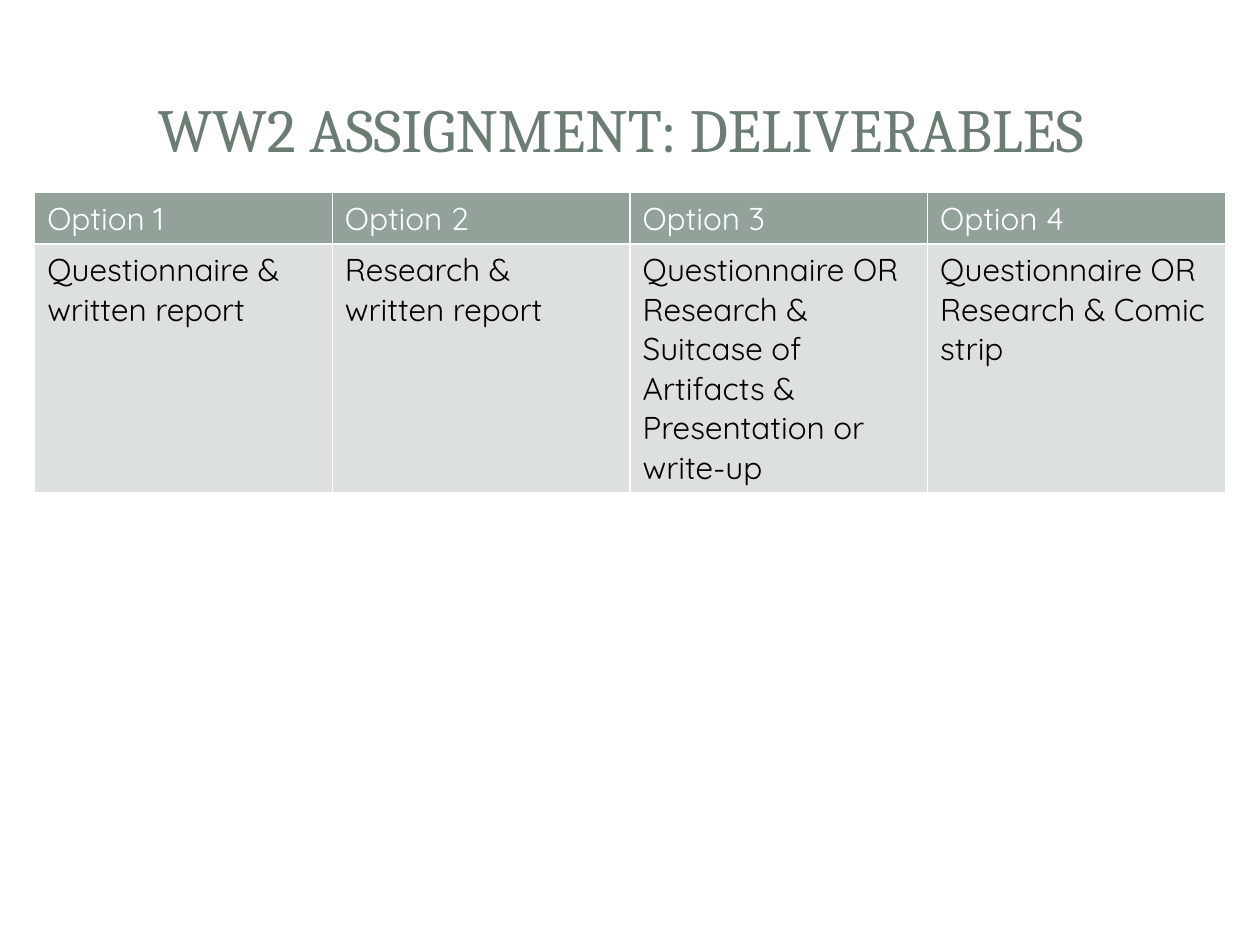
from lxml.etree import SubElement
from pptx import Presentation
from pptx.dml.color import RGBColor
from pptx.enum.shapes import MSO_SHAPE
from pptx.enum.text import MSO_ANCHOR, PP_ALIGN
from pptx.oxml.ns import qn
from pptx.util import Cm, Pt

WHITE = RGBColor(0xFF, 0xFF, 0xFF)
BLACK = RGBColor(0, 0, 0)
GREEN = RGBColor(0x6B, 0x7D, 0x72)
SAGE = RGBColor(0x93, 0xA2, 0x99)
PALE = RGBColor(0xDC, 0xE0, 0xDE)

TITLE = "WW2 ASSIGNMENT: DELIVERABLES "
OPTIONS = [
    ("Option 1", "Questionnaire & written report"),
    ("Option 2", "Research & written report"),
    ("Option 3", "Questionnaire OR Research & Suitcase of Artifacts"
                 " & Presentation or write-up"),
    ("Option 4", "Questionnaire OR Research & Comic strip"),
]
# Row height in cm, fill and text colour: header, then body
ROWS = [(1.04, SAGE, WHITE), (5.02, PALE, BLACK)]
WIDTH = 6
# Page, title band and band centre: shape, left, top, width, height, opacity
PANELS = [
    (MSO_SHAPE.ROUNDED_RECTANGLE, 0.25, 0.28, 24.89, 18.52, 100),
    (MSO_SHAPE.RECTANGLE, 0.76, 0.76, 23.88, 3.68, 83),
    (MSO_SHAPE.RECTANGLE, 1.04, 1.04, 23.29, 3.1, 100),
]


def write(frame, text, font="Quicksand", size=18, color=BLACK,
          align=PP_ALIGN.LEFT):
    para = frame.paragraphs[0]
    para.alignment = align
    run = para.add_run()
    run.text = text
    run.font.name = font
    run.font.size = Pt(size)
    run.font.color.rgb = color


def panel(slide, kind, left, top, width, height, alpha):
    shape = slide.shapes.add_shape(
        kind, Cm(left), Cm(top), Cm(width), Cm(height))
    shape.shadow.inherit = False
    shape.line.fill.background()
    shape.fill.solid()
    shape.fill.fore_color.rgb = WHITE
    if kind == MSO_SHAPE.ROUNDED_RECTANGLE:
        shape.adjustments[0] = 0.02
    if alpha < 100:
        tint = shape.fill._xPr.find(f".//{qn('a:srgbClr')}")
        SubElement(tint, qn("a:alpha"), val=str(alpha * 1000))


def edge(cell, color, points=1):
    """Draw the four borders of a cell; call before its fill is set."""
    props = cell._tc.get_or_add_tcPr()
    for side in ("lnL", "lnR", "lnT", "lnB"):
        line = SubElement(props, qn(f"a:{side}"), w=str(Pt(points)))
        fill = SubElement(line, qn("a:solidFill"))
        SubElement(fill, qn("a:srgbClr"), val=str(color))


def main():
    deck = Presentation()
    deck.slide_width, deck.slide_height = Cm(25.4), Cm(19.05)
    slide = deck.slides.add_slide(deck.slide_layouts[6])

    for spot in PANELS:
        panel(slide, *spot)

    title = slide.shapes.add_textbox(Cm(1.19), Cm(1.14), Cm(22.94), Cm(2.9))
    frame = title.text_frame
    frame.word_wrap = True
    frame.vertical_anchor = MSO_ANCHOR.MIDDLE
    write(frame, TITLE, font="Cambria", size=35, color=GREEN,
          align=PP_ALIGN.CENTER)

    table = slide.shapes.add_table(
        len(ROWS), len(OPTIONS), Cm(0.7), Cm(3.88),
        Cm(WIDTH * len(OPTIONS)), Cm(sum(row[0] for row in ROWS))).table
    for r, (height, fill, color) in enumerate(ROWS):
        table.rows[r].height = Cm(height)
        for c, option in enumerate(OPTIONS):
            cell = table.cell(r, c)
            edge(cell, WHITE)
            cell.fill.solid()
            cell.fill.fore_color.rgb = fill
            write(cell.text_frame, option[r], color=color)

    deck.save("out.pptx")


if __name__ == "__main__":
    main()
